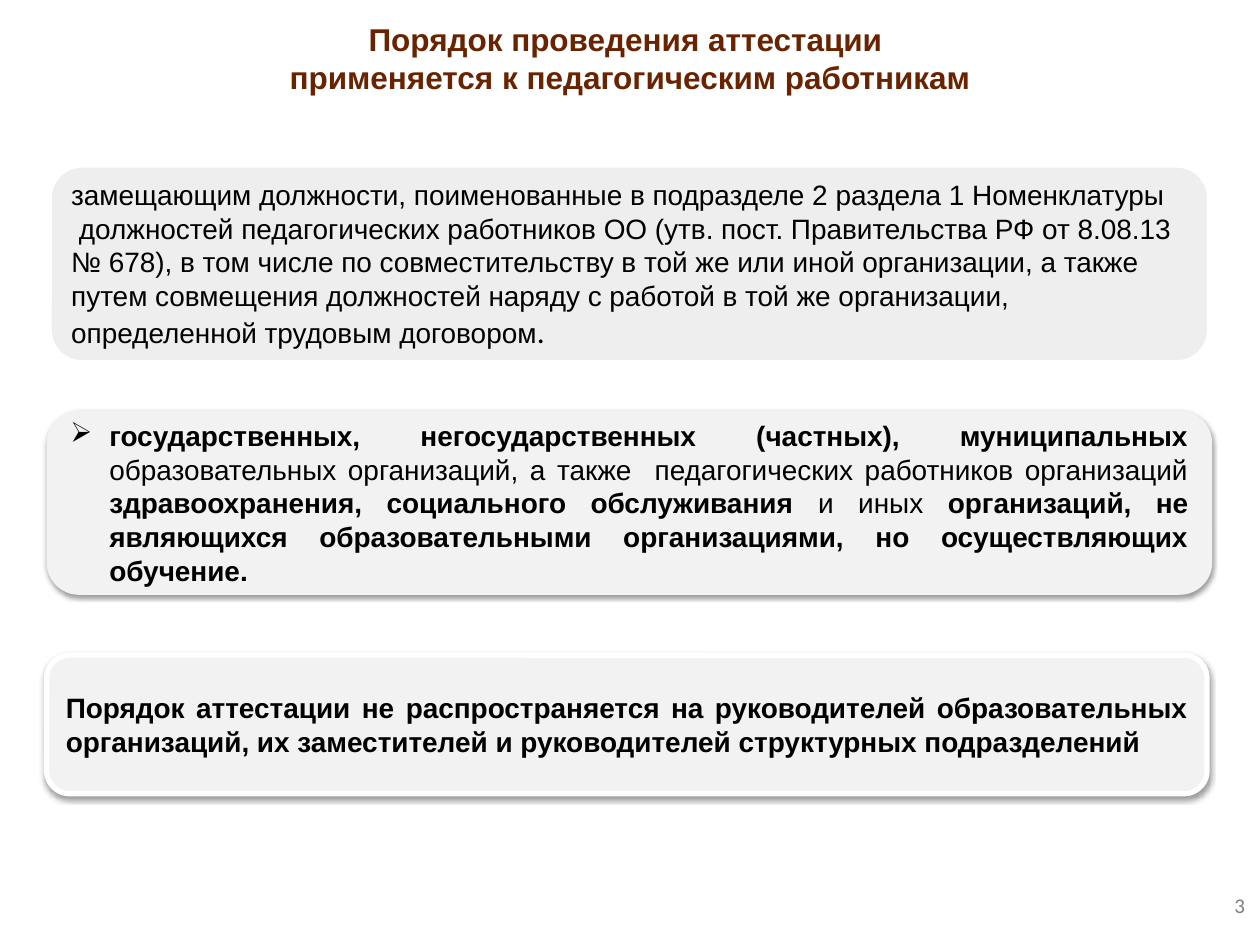
"""Builds a slide on who the staff attestation procedure applies to."""
from lxml import etree
from pptx import Presentation, util as u
from pptx.dml.color import RGBColor
from pptx.enum import shapes, text
from pptx.oxml import ns

BLACK = RGBColor(0, 0, 0)
BROWN = RGBColor(0x6A, 0x23, 0x00)
GRAY = RGBColor(0x80, 0x80, 0x80)
PALE = RGBColor(0xF2, 0xF2, 0xF2)
SOFT = RGBColor(0xEE, 0xEE, 0xEE)
WHITE = RGBColor(0xFF, 0xFF, 0xFF)
ALIGN = text.PP_ALIGN
ANCHOR = text.MSO_ANCHOR

TITLE = [["Порядок проведения аттестации "],
         ["применяется к педагогическим работникам"]]
POSTS = [
    ["замещающим должности, поименованные в подразделе 2 раздела 1 Номенклатуры"],
    [" должностей педагогических работников ОО (утв. пост. Правительства РФ от 8.08.13"],
    ["№ 678), в том числе по совместительству в той же или иной организации, а также"],
    ["путем совмещения должностей наряду с работой в той же организации,"],
    ["определенной трудовым договором", (".", {"size": 18, "font": "Calibri"})],
]
PLAIN = {"bold": False}
STAFF = [[
    "государственных, негосударственных (частных), муниципальных ",
    ("образовательных организаций, а также  педагогических работников организаций ", PLAIN),
    "здравоохранения, социального обслуживания ",
    ("и иных ", PLAIN),
    "организаций, не являющихся образовательными организациями, но осуществляющих обучение.",
]]
LIMIT = [["Порядок аттестации не распространяется на руководителей образовательных "
          "организаций, их заместителей и руководителей структурных подразделений"]]

CARDS = [
    dict(at=(0.39, 3.28, 9.21, 1.42), fill=PALE, line=PALE, shade=True,
         words=STAFF, look=dict(bold=True, align=ALIGN.JUSTIFY, bullet="➢")),
    dict(at=(0.39, 1.31, 9.21, 1.57), fill=SOFT, line=WHITE, shade=False,
         words=POSTS, look=dict(align=ALIGN.LEFT, wrap=False)),
    dict(at=(0.37, 5.2, 9.21, 1.1), fill=PALE, line=WHITE, shade=True,
         words=LIMIT, look=dict(bold=True, align=ALIGN.JUSTIFY)),
]


def write(shape, words, size=16, font="Arial", color=BLACK, bold=False,
          align=ALIGN.LEFT, anchor=ANCHOR.MIDDLE, wrap=True, bullet=None):
    frame = shape.text_frame
    frame.word_wrap = wrap
    frame.vertical_anchor = anchor
    for i, line in enumerate(words):
        para = frame.add_paragraph() if i else frame.paragraphs[0]
        para.alignment = align
        if bullet:
            props = para._p.get_or_add_pPr()
            props.set("marL", str(u.Inches(0.31)))
            props.set("indent", str(-u.Inches(0.31)))
            mark = etree.SubElement(props, ns.qn("a:buChar"))
            mark.set("char", bullet)
        for part in line:
            words, own = (part, {}) if isinstance(part, str) else part
            run = para.add_run()
            run.text = words
            run.font.size = u.Pt(own.get("size", size))
            run.font.name = own.get("font", font)
            run.font.bold = own.get("bold", bold)
            run.font.color.rgb = color


def cast(shape):
    effects = shape._element.spPr.find(ns.qn("a:effectLst"))
    shade = etree.SubElement(effects, ns.qn("a:outerShdw"), blurRad=str(u.Pt(3.1)),
                             dist=str(u.Pt(1.6)), dir="5400000", rotWithShape="0")
    tint = etree.SubElement(shade, ns.qn("a:srgbClr"), val="000000")
    etree.SubElement(tint, ns.qn("a:alpha"), val="38000")


def label(slide, at, words, **look):
    write(slide.shapes.add_textbox(*map(u.Inches, at)), words, **look)


def card(slide, at, fill, line, shade, words, look):
    box = slide.shapes.add_shape(shapes.MSO_SHAPE.ROUNDED_RECTANGLE, *map(u.Inches, at))
    box.shadow.inherit = False
    box.fill.solid()
    box.fill.fore_color.rgb = fill
    box.line.color.rgb = line
    box.line.width = u.Pt(3)
    if shade:
        cast(box)
    write(box, words, **look)


def main():
    deck = Presentation()
    deck.slide_width, deck.slide_height = u.Inches(10), u.Inches(7.5)
    slide = deck.slides.add_slide(deck.slide_layouts[6])
    label(slide, (0, 0.11, 10, 0.7), TITLE, size=18, color=BROWN, bold=True,
          align=ALIGN.CENTER, anchor=ANCHOR.BOTTOM)
    label(slide, (7.65, 6.98, 2.33, 0.4), [["3"]], size=12, font="Calibri",
          color=GRAY, align=ALIGN.RIGHT)
    for item in CARDS:
        card(slide, **item)
    deck.save("out.pptx")


if __name__ == "__main__":
    main()
